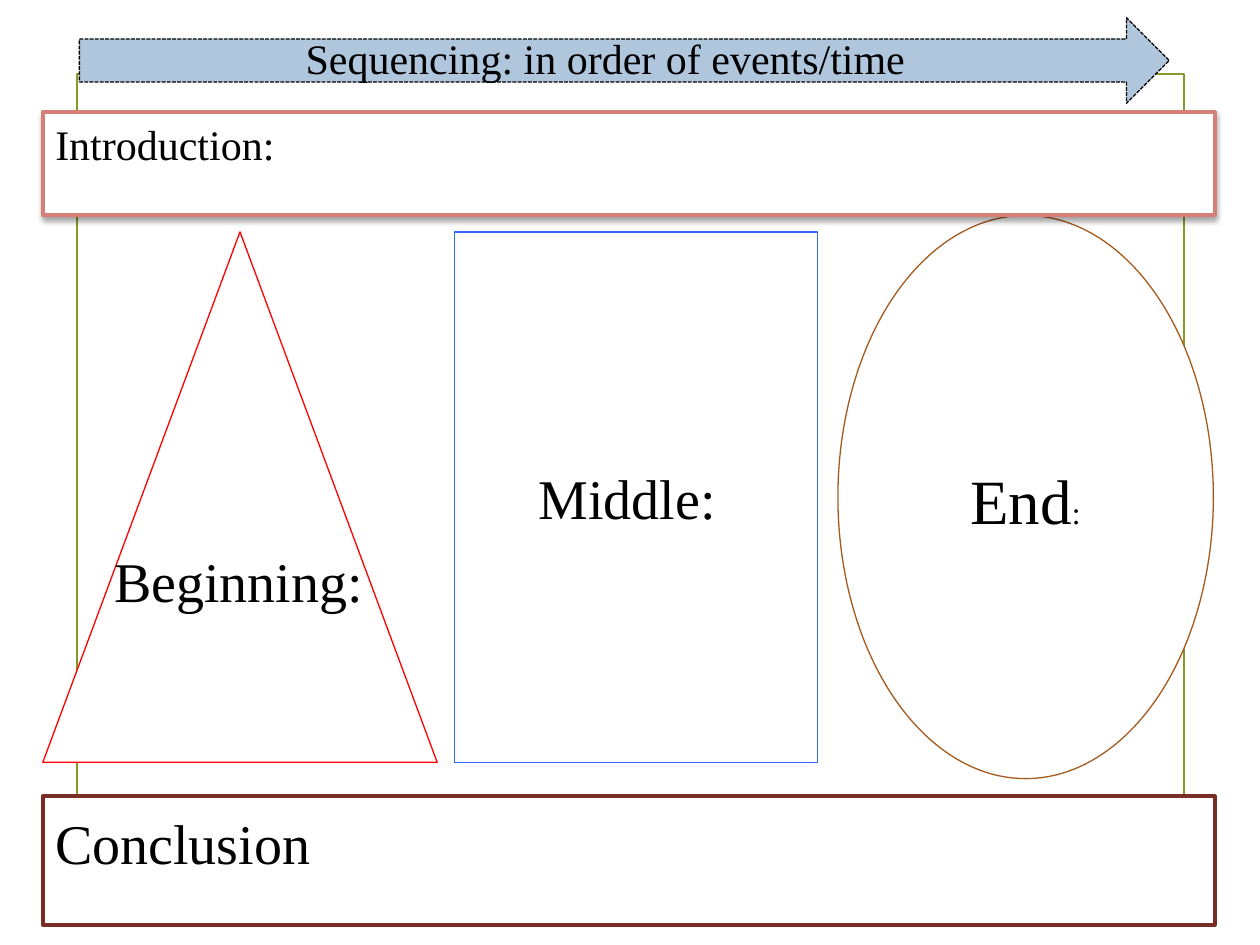
from lxml import etree
from pptx import Presentation, util as u
from pptx.dml.color import RGBColor
from pptx.enum import dml, shapes, text
from pptx.oxml import ns

WHITE = RGBColor(0xFF, 0xFF, 0xFF)
BLACK = RGBColor(0x00, 0x00, 0x00)
OLIVE = RGBColor(0x83, 0x99, 0x2A)
RED = RGBColor(0xFF, 0x00, 0x00)
BLUE = RGBColor(0x33, 0x66, 0xFF)
BROWN = RGBColor(0xA4, 0x5A, 0x1D)
ROSE = RGBColor(0xD4, 0x7F, 0x77)
MAROON = RGBColor(0x7A, 0x2D, 0x26)
SKY = RGBColor(0xAF, 0xC6, 0xDD)
FONT = "Times New Roman"

presentation = Presentation()
presentation.slide_width = u.Inches(10)
presentation.slide_height = u.Inches(7.5)
slide = presentation.slides.add_slide(presentation.slide_layouts[6])
column = presentation.slide_width / 100
row = presentation.slide_height / 75


def place(left, top, width, height):
    return [round(n) for n in (left * column, top * row, width * column, height * row)]


def add_outline(kind, box, fill, line, weight):
    shape = slide.shapes.add_shape(kind, *place(*box))
    shape.shadow.inherit = False
    shape.fill.solid()
    shape.fill.fore_color.rgb = fill
    shape.line.color.rgb = line
    shape.line.width = u.Pt(weight)
    return shape


kinds = shapes.MSO_SHAPE
margin, band_width = 3.4, 93
stage_top, stage_height = 18.4, 42.1
introduction_top, conclusion_top = 8.9, 63.2

add_outline(kinds.RECTANGLE, (6.1, 5.9, 87.9, 63), WHITE, OLIVE, 1.25)
add_outline(kinds.ISOSCELES_TRIANGLE, (margin, stage_top, 31.3, stage_height), WHITE, RED, 0.75)
add_outline(kinds.RECTANGLE, (36.1, stage_top, 28.8, stage_height), WHITE, BLUE, 0.75)
add_outline(kinds.OVAL, (66.5, 17.1, 29.8, 44.7), WHITE, BROWN, 0.75)
introduction = add_outline(
    kinds.RECTANGLE, (margin, introduction_top, band_width, 8.2), WHITE, ROSE, 2.25)
add_outline(kinds.RECTANGLE, (margin, conclusion_top, band_width, 10.2), WHITE, MAROON, 2.25)
arrow = add_outline(kinds.RIGHT_ARROW, (6.3, 1.4, 86.5, 6.8), SKY, BLACK, 0.75)
arrow.line.dash_style = dml.MSO_LINE.SQUARE_DOT

effects = introduction._element.spPr.find(ns.qn("a:effectLst"))
shadow = etree.SubElement(
    effects, ns.qn("a:outerShdw"), blurRad=str(u.Pt(3.1)), dist=str(u.Pt(1.8)),
    dir="5400000", rotWithShape="0")
shadow_color = etree.SubElement(shadow, ns.qn("a:srgbClr"), val=str(BLACK))
etree.SubElement(shadow_color, ns.qn("a:alpha"), val="35000")

CENTER, LEFT = text.PP_ALIGN.CENTER, text.PP_ALIGN.LEFT
labels = [
    ((6.3, 2.1, 83.5, 5), CENTER, [("Sequencing: in order of events/time", 24)]),
    ((7.5, 42.9, 24, 6.4), CENTER, [("Beginning: ", 32)]),
    ((39.2, 36.3, 22.3, 6.4), CENTER, [("Middle: ", 32)]),
    ((margin, 63.7, 25.7, 6.4), LEFT, [("Conclusion", 32)]),
    ((72.2, 36.1, 18.4, 7.1), CENTER, [("End", 36), (":", 18)]),
    ((margin, introduction_top, 36.1, 5), LEFT, [("Introduction:", 24)]),
]
for box, alignment, parts in labels:
    label = slide.shapes.add_textbox(*place(*box))
    label.text_frame.word_wrap = True
    label.text_frame.auto_size = text.MSO_AUTO_SIZE.SHAPE_TO_FIT_TEXT
    paragraph = label.text_frame.paragraphs[0]
    paragraph.alignment = alignment
    for words, size in parts:
        run = paragraph.add_run()
        run.text = words
        run.font.name = FONT
        run.font.size = u.Pt(size)
        run.font.color.rgb = BLACK

presentation.save("out.pptx")
